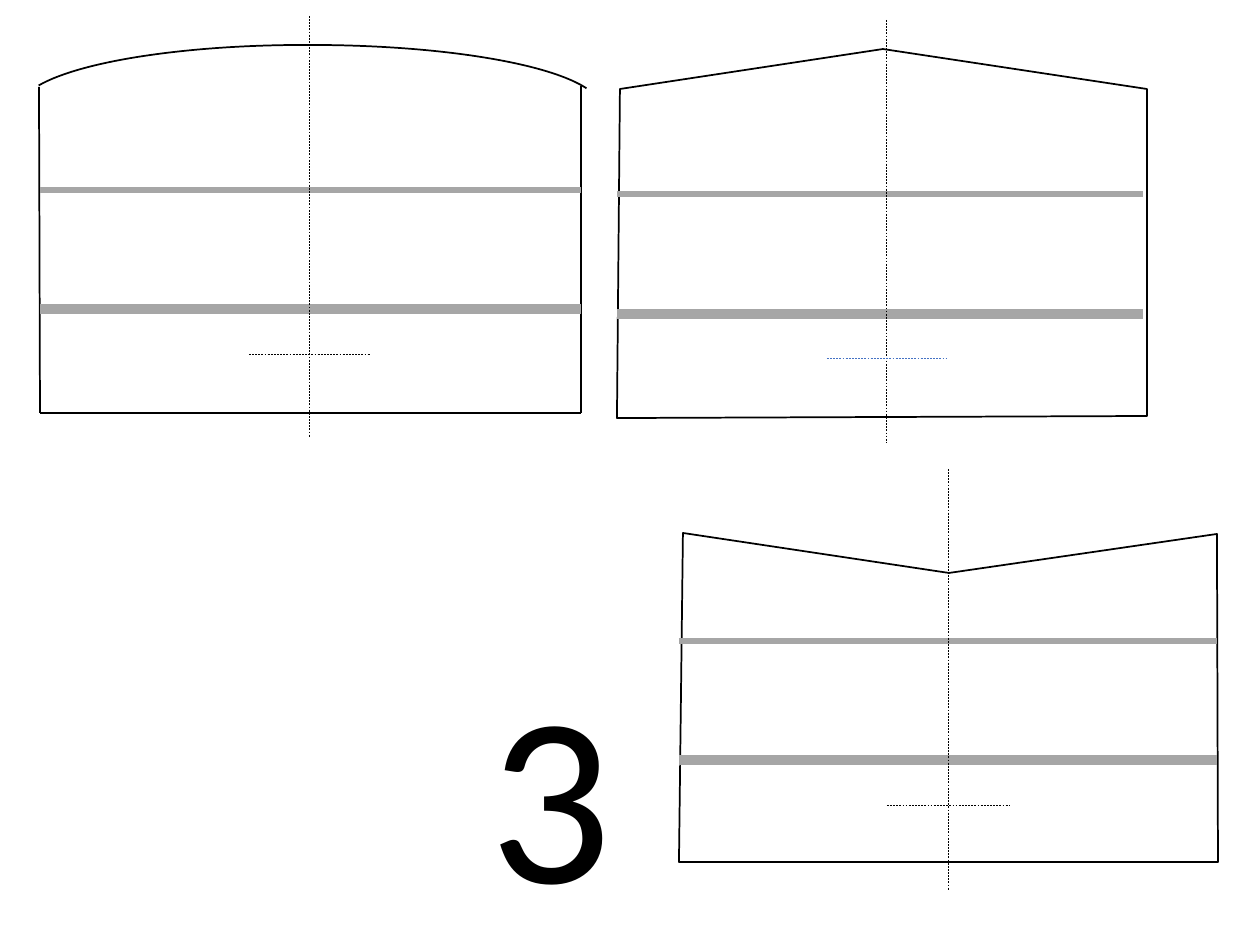
from dataclasses import dataclass

from lxml.etree import SubElement
from pptx import Presentation
from pptx.dml.color import RGBColor
from pptx.enum.dml import MSO_LINE
from pptx.enum.shapes import MSO_CONNECTOR, MSO_SHAPE
from pptx.enum.text import MSO_AUTO_SIZE, PP_ALIGN
from pptx.oxml.ns import qn
from pptx.util import Pt

EMU_PER_PX = 914400 / 126


@dataclass(frozen=True)
class Theme:
    ink: str = "000000"
    paper: str = "FFFFFF"
    band: str = "A6A6A6"
    accent: str = "4472C4"
    font: str = "Calibri"
    number_size: int = 138
    outline: float = 1
    thin_band: float = 3
    thick_band: float = 6
    hairline: float = 0.25


THEME = Theme()
SLIDE_SIZE = (1260, 945)
NUMBER = {"text": "3", "box": (476, 636, 149, 305)}

PANELS = [
    {
        "arcs": [
            ((20, 45, 581, 126), (162.38, 213.56), False),
            ((20, 45, 570, 126), (158.81, 213.11), True),
        ],
        "walls": [(39, 87, 40, 413), (581, 86, 581, 413), (40, 413, 581, 413)],
        "band_span": (40, 581), "band_tops": (190, 309),
        "axis": (309, 16, 437), "tick": (249, 370, 354), "tick_color": THEME.ink,
    },
    {
        "outline": [(617, 418), (1147, 416), (1147, 89), (883, 49), (620, 89)],
        "band_span": (617, 1143), "band_tops": (194, 314),
        "axis": (886, 20, 442), "tick": (827, 946, 358), "tick_color": THEME.accent,
    },
    {
        "outline": [(679, 862), (683, 533), (949, 573), (1217, 534), (1218, 862)],
        "band_span": (679, 1217), "band_tops": (641, 760),
        "axis": (948, 469, 890), "tick": (887, 1009, 805), "tick_color": THEME.ink,
    },
]


def px(*lengths):
    return [round(length * EMU_PER_PX) for length in lengths]


def style_line(line, color, width):
    line.color.rgb = RGBColor.from_string(color)
    line.width = Pt(width)


def style_outline(shape):
    shape.shadow.inherit = False
    shape.fill.solid()
    shape.fill.fore_color.rgb = RGBColor.from_string(THEME.paper)
    style_line(shape.line, THEME.ink, THEME.outline)


def add_line(shapes, ends, color, width, dashed=False):
    connector = shapes.add_connector(MSO_CONNECTOR.STRAIGHT, *px(*ends))
    style_line(connector.line, color, width)
    if dashed:
        connector.line.dash_style = MSO_LINE.DASH
    SubElement(connector._element.spPr, qn("a:effectLst"))


def add_arc(shapes, box, angles, flipped):
    arc = shapes.add_shape(MSO_SHAPE.ARC, *px(*box))
    for index, angle in enumerate(angles):
        arc.adjustments[index] = angle
    if flipped:
        arc._element.spPr.find(qn("a:xfrm")).set("flipH", "1")
    style_outline(arc)


def add_outline(shapes, points):
    builder = shapes.build_freeform(*points[0], scale=EMU_PER_PX)
    builder.add_line_segments(points[1:], close=True)
    style_outline(builder.convert_to_shape())


def add_panel(slide, panel):
    shapes = slide.shapes.add_group_shape().shapes
    for arc in panel.get("arcs", []):
        add_arc(shapes, *arc)
    for wall in panel.get("walls", []):
        add_line(shapes, wall, THEME.ink, THEME.outline)
    if "outline" in panel:
        add_outline(shapes, panel["outline"])
    left, right = panel["band_span"]
    for y, width in zip(panel["band_tops"], (THEME.thin_band, THEME.thick_band)):
        add_line(shapes, (left, y, right, y), THEME.band, width)
    x, top, bottom = panel["axis"]
    add_line(shapes, (x, top, x, bottom), THEME.ink, THEME.hairline, True)
    start, end, y = panel["tick"]
    add_line(shapes, (start, y, end, y), panel["tick_color"], THEME.hairline, True)


def add_number(slide):
    frame = slide.shapes.add_textbox(*px(*NUMBER["box"])).text_frame
    frame.word_wrap = False
    frame.auto_size = MSO_AUTO_SIZE.SHAPE_TO_FIT_TEXT
    paragraph = frame.paragraphs[0]
    paragraph.alignment = PP_ALIGN.CENTER
    run = paragraph.add_run()
    run.text = NUMBER["text"]
    run.font.name = THEME.font
    run.font.size = Pt(THEME.number_size)
    run.font.color.rgb = RGBColor.from_string(THEME.ink)


def main():
    presentation = Presentation()
    presentation.slide_width, presentation.slide_height = px(*SLIDE_SIZE)
    slide = presentation.slides.add_slide(presentation.slide_layouts[6])
    first_panel, *other_panels = PANELS
    add_panel(slide, first_panel)
    add_number(slide)
    for panel in other_panels:
        add_panel(slide, panel)
    presentation.save("out.pptx")


if __name__ == "__main__":
    main()
